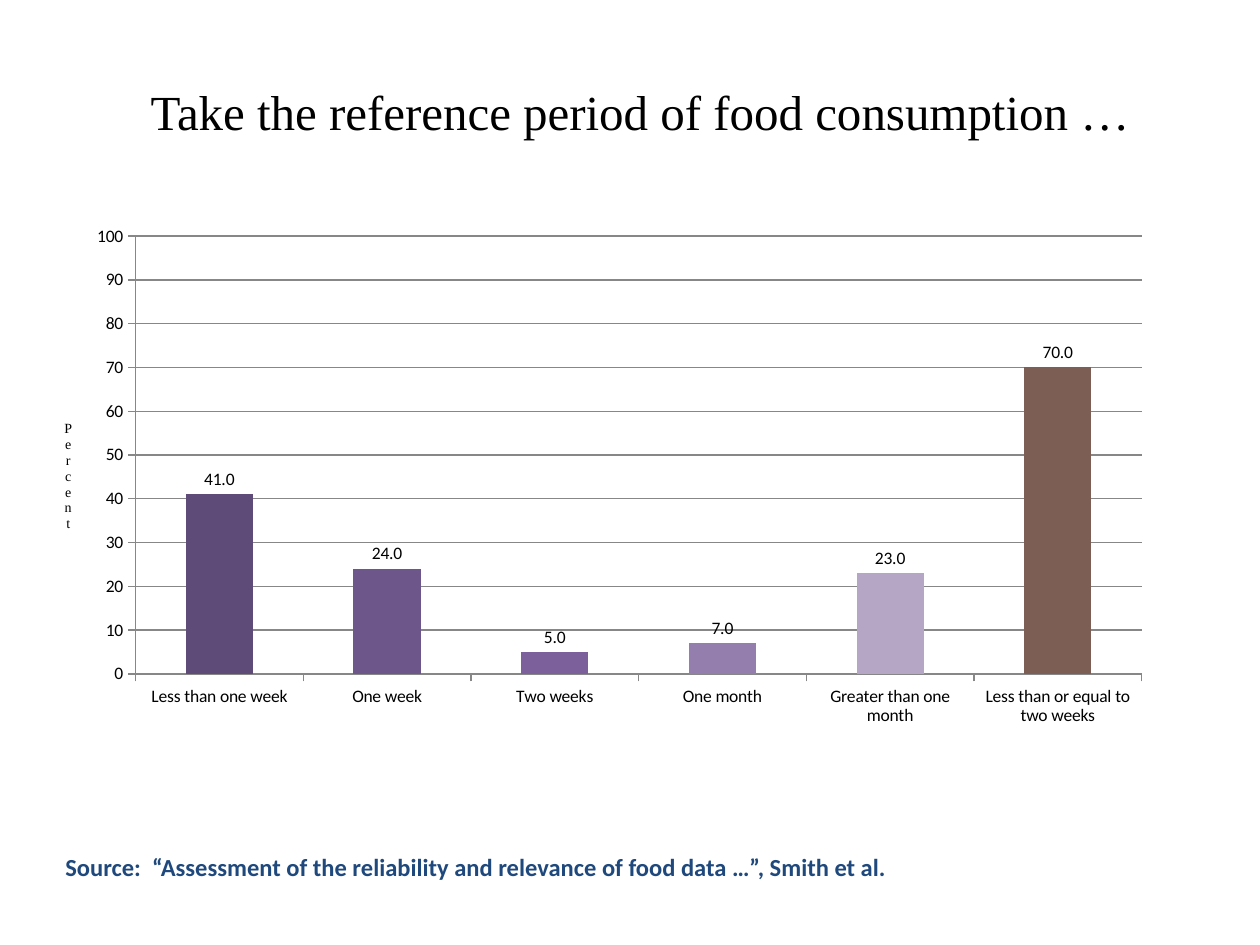
from lxml import etree
from pptx import Presentation
from pptx.chart.data import CategoryChartData
from pptx.dml.color import RGBColor
from pptx.enum.chart import XL_CHART_TYPE as ChartType
from pptx.enum.chart import XL_LABEL_POSITION as LabelPosition
from pptx.enum.chart import XL_TICK_MARK as TickMark
from pptx.enum.text import MSO_ANCHOR as Anchor
from pptx.enum.text import PP_ALIGN as Align
from pptx.oxml import parse_xml
from pptx.oxml.ns import nsdecls
from pptx.util import Emu, Pt

PX_PER_INCH = 126
BLACK, NAVY, GRID = "000000", "1F497D", "878787"
BARS = [
    ("Less than one week", 41, "5F4B78"),
    ("One week", 24, "6D568A"),
    ("Two weeks", 5, "7C609B"),
    ("One month", 7, "937EAE"),
    ("Greater than one month", 23, "B4A6C4"),
    ("Less than or equal to two weeks", 70, "7C5E54"),
]


def px(*lengths):
    return [Emu(round(length * 914400 / PX_PER_INCH)) for length in lengths]


def write(frame, text, size, font="Calibri", color=BLACK, bold=False, align=Align.LEFT):
    frame.text = text
    paragraph = frame.paragraphs[0]
    paragraph.alignment = align
    run_font = paragraph.runs[0].font
    run_font.name, run_font.size, run_font.bold = font, Pt(size), bold
    run_font.color.rgb = RGBColor.from_string(color)


presentation = Presentation()
presentation.slide_width, presentation.slide_height = px(1260, 945)
slide = presentation.slides.add_slide(presentation.slide_layouts[5])

# Title
title = slide.shapes.title
title.left, title.top, title.width, title.height = px(73, 32, 1134, 157)
title.text_frame.vertical_anchor = Anchor.MIDDLE
write(title.text_frame, "Take the reference period of food consumption …", 28,
      font="Times New Roman", align=Align.CENTER)

# Column chart
chart_data = CategoryChartData(number_format="0.0")
chart_data.categories = [name for name, value, color in BARS]
chart_data.add_series("Series 1", [value for name, value, color in BARS])
chart = slide.shapes.add_chart(
    ChartType.COLUMN_CLUSTERED, *px(32, 199, 1113, 599), chart_data).chart
chart.has_legend = False
chart.has_title = False
chart.font.name, chart.font.size = "Calibri", Pt(10)
chart.font.color.rgb = RGBColor.from_string(BLACK)

value_axis, category_axis = chart.value_axis, chart.category_axis
value_axis.minimum_scale, value_axis.maximum_scale, value_axis.major_unit = 0, 100, 10
value_axis.tick_labels.number_format = "0"
value_axis.tick_labels.number_format_is_linked = False
value_axis.has_major_gridlines = True
for line in (value_axis.format.line, category_axis.format.line,
             value_axis.major_gridlines.format.line):
    line.color.rgb = RGBColor.from_string(GRID)
    line.width = Pt(0.75)
for axis in (value_axis, category_axis):
    axis.major_tick_mark = TickMark.OUTSIDE

axis_title = value_axis.axis_title
write(axis_title.text_frame, "Percent", 8, font="Times New Roman", align=Align.CENTER)
body = axis_title.text_frame._txBody.bodyPr
body.set("rot", "0")
body.set("vert", "wordArtVert")

plot = chart.plots[0]
plot.gap_width = 150
plot.vary_by_categories = False
plot.has_data_labels = True
labels = plot.data_labels
labels.show_value = True
labels.number_format, labels.number_format_is_linked = "0.0", False
labels.position = LabelPosition.OUTSIDE_END
for index, (name, value, color) in enumerate(BARS):
    fill = plot.series[0].points[index].format.fill
    fill.solid()
    fill.fore_color.rgb = RGBColor.from_string(color)

# Fixed inner plot area
plot_area = chart._chartSpace.chart.plotArea
for old_layout in plot_area.findall("{*}layout"):
    plot_area.remove(old_layout)
layout = parse_xml(f"<c:layout {nsdecls('c')}><c:manualLayout/></c:layout>")
settings = {"layoutTarget": "inner", "xMode": "edge", "yMode": "edge",
            "x": 0.093, "y": 0.062, "w": 0.904, "h": 0.731}
for tag, setting in settings.items():
    etree.SubElement(layout[0], f"{{{layout.nsmap['c']}}}{tag}").set("val", str(setting))
plot_area.insert(0, layout)

# Source line
source = slide.shapes.add_textbox(*px(53, 819, 892, 95)).text_frame
source.word_wrap = True
source.vertical_anchor = Anchor.MIDDLE
write(source, "Source:  “Assessment of the reliability and relevance of food data …”, Smith et al.",
      14, color=NAVY, bold=True)

presentation.save("out.pptx")
